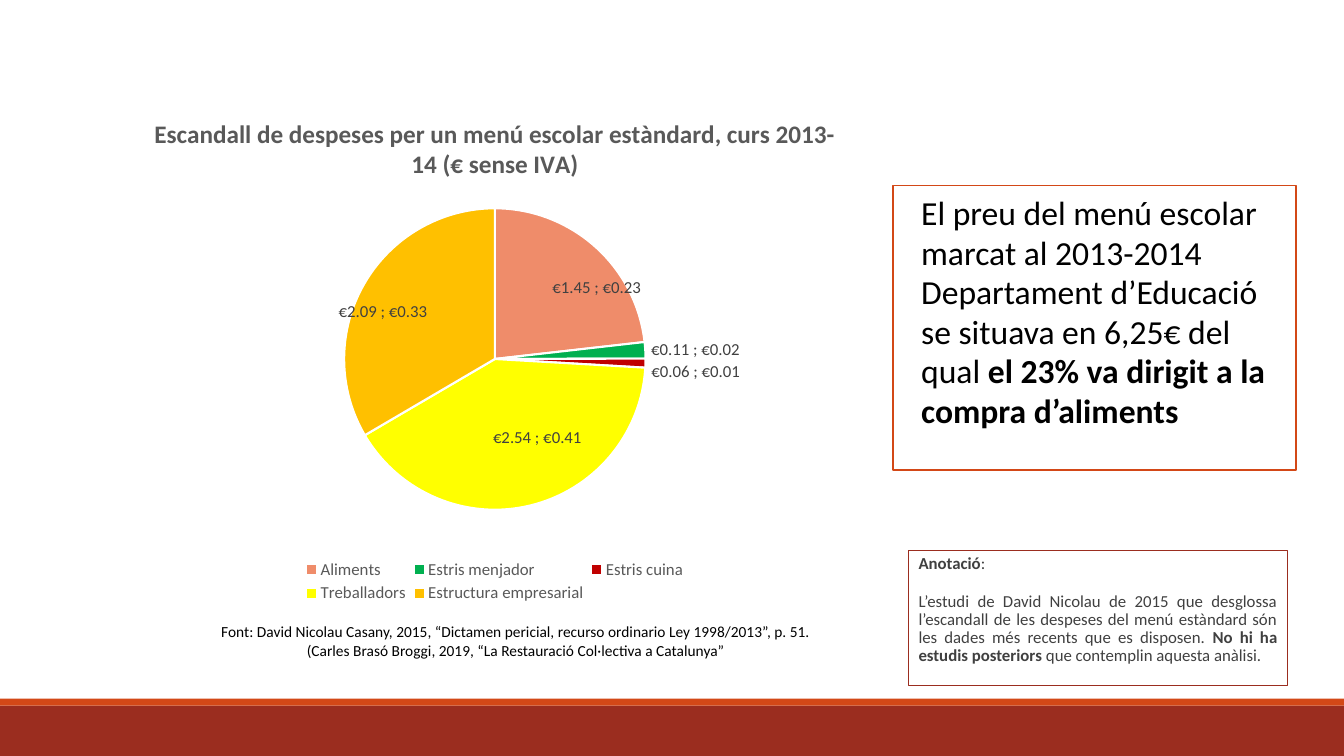
from lxml import etree
from pptx import Presentation
from pptx.chart.data import CategoryChartData
from pptx.dml.color import RGBColor
from pptx.enum.chart import XL_CHART_TYPE, XL_LABEL_POSITION as LABEL, XL_LEGEND_POSITION
from pptx.enum.shapes import MSO_SHAPE
from pptx.enum.text import MSO_ANCHOR, PP_ALIGN
from pptx.oxml.ns import qn
from pptx.util import Pt

BRICK = RGBColor(0x9B, 0x2D, 0x1F)
ORANGE = RGBColor(0xD3, 0x48, 0x17)
SALMON = RGBColor(0xEF, 0x8C, 0x6A)
GREEN = RGBColor(0x00, 0xB0, 0x50)
RED = RGBColor(0xC0, 0x00, 0x00)
YELLOW = RGBColor(0xFF, 0xFF, 0x00)
AMBER = RGBColor(0xFF, 0xC0, 0x00)
WHITE = RGBColor(0xFF, 0xFF, 0xFF)
BLACK = RGBColor(0, 0, 0)
GREY = RGBColor(0x59, 0x59, 0x59)
DARK = RGBColor(0x40, 0x40, 0x40)
EURO = '"€"#,##0.00_)'


def make_layout(**values):
    layout = etree.Element(qn("c:layout"))
    manual = etree.SubElement(layout, qn("c:manualLayout"))
    for name, value in values.items():
        etree.SubElement(manual, qn(f"c:{name}")).set("val", str(value))
    return layout


def style_font(font, size, color, bold=False):
    font.name, font.size, font.bold = "Calibri", Pt(size), bold
    font.color.rgb = color


deck = Presentation()
deck.slide_width, deck.slide_height = Pt(960), Pt(540)
slide = deck.slides.add_slide(deck.slide_layouts[6])

for top, height, color in [(504, 36, BRICK), (499, 5, ORANGE)]:
    band = slide.shapes.add_shape(MSO_SHAPE.RECTANGLE, 0, Pt(top), Pt(960), Pt(height))
    band.shadow.inherit = False
    band.fill.solid()
    band.fill.fore_color.rgb = color
    band.line.fill.background()

costs = CategoryChartData(number_format=EURO)
costs.categories = ["Aliments", "Estris menjador", "Estris cuina", "Treballadors", "Estructura empresarial"]
costs.add_series("Series 1", [1.45, 0.11, 0.06, 2.54, 2.09])
chart = slide.shapes.add_chart(XL_CHART_TYPE.PIE, Pt(34.5), Pt(68.5), Pt(638), Pt(365), costs).chart
style_font(chart.font, 10, BLACK)

chart.has_title = True
title = chart.chart_title.text_frame
title.text = "Escandall de despeses per un menú escolar estàndard, curs 2013-14 (€ sense IVA)"
style_font(title.paragraphs[0].runs[0].font, 18, GREY, True)

chart.has_legend = True
legend = chart.legend
legend.position = XL_LEGEND_POSITION.BOTTOM
legend.include_in_layout = False
style_font(legend.font, 12, GREY)
legend._element.find(qn("c:legendPos")).addnext(
    make_layout(xMode="edge", yMode="edge", x=0.28, y=0.9, w=0.44, h=0.1))

plot = chart.plots[0]
plot.vary_by_categories = True
plot_area = chart._chartSpace.chart.plotArea
for old_layout in plot_area.findall(qn("c:layout")):
    plot_area.remove(old_layout)
plot_area.insert(0, make_layout(layoutTarget="inner", xMode="edge", yMode="edge", x=0.33, y=0.22, w=0.34, h=0.59))

series = plot.series[0]
labels = series.data_labels
labels.show_value = labels.show_percentage = True
labels.number_format, labels.number_format_is_linked = EURO, False
labels.position = LABEL.BEST_FIT
style_font(labels.font, 12, DARK)

for index, color in enumerate([SALMON, GREEN, RED, YELLOW, AMBER]):
    point = series.points[index]
    point.format.fill.solid()
    point.format.fill.fore_color.rgb = color
    point.format.line.color.rgb = WHITE
    point.format.line.width = Pt(1.5)

label_shifts = {0: (0.06, -0.03), 3: (0.03, 0.01), 4: (-0.05, -0.02)}
for index in label_shifts:
    label = series.points[index].data_label
    style_font(label.font, 12, DARK)
    label.position = LABEL.CENTER

for element in series._element.iter(qn("c:dLbl")):
    index = element.find(qn("c:idx"))
    x, y = label_shifts[int(index.get("val"))]
    layout = make_layout(x=x, y=y)
    index.addnext(layout)
    number_format = etree.Element(qn("c:numFmt"), formatCode=EURO, sourceLinked="0")
    layout.addnext(number_format)
    element.find(qn("c:showPercent")).set("val", "1")

for bubble in list(series._element.iter(qn("c:showBubbleSize"))):
    separator = etree.Element(qn("c:separator"))
    separator.text = "; "
    bubble.addnext(separator)

source = slide.shapes.add_textbox(Pt(150), Pt(441), Pt(437), Pt(30)).text_frame
source.word_wrap = True
source.text = ("Font: David Nicolau Casany, 2015, “Dictamen pericial, recurso ordinario Ley 1998/2013”, p. 51. "
               "(Carles Brasó Broggi, 2019, “La Restauració Col·lectiva a Catalunya”")
source.paragraphs[0].alignment = PP_ALIGN.CENTER
style_font(source.paragraphs[0].runs[0].font, 11, BLACK)

note = [
    [("Anotació", True), (":", False)],
    [("L’estudi de David Nicolau de 2015 que desglossa l’escandall de les despeses del menú estàndard "
      "són les dades més recents que es disposen. ", False),
     ("No hi ha estudis posteriors ", True), ("que contemplin aquesta anàlisi.", False)],
]
price = [
    [("El preu del menú escolar marcat al 2013-2014 Departament d’Educació se situava en 6,25€ del qual ", False),
     ("el 23% va dirigit a la compra d’aliments", True)],
]
boxes = [
    ((649, 393, 270.5, 97), BRICK, 0.75, (7.2, 3.6), PP_ALIGN.JUSTIFY, 0.9, 12, DARK, note),
    ((638, 132.5, 288, 203), ORANGE, 1.25, (20, 6), PP_ALIGN.LEFT, 0.98, 24, BLACK, price),
]
for place, edge, width, (side, top), align, spacing, size, color, paragraphs in boxes:
    box = slide.shapes.add_shape(MSO_SHAPE.RECTANGLE, *map(Pt, place))
    box.shadow.inherit = False
    box.fill.solid()
    box.fill.fore_color.rgb = WHITE
    box.line.color.rgb = edge
    box.line.width = Pt(width)
    frame = box.text_frame
    frame.word_wrap = True
    frame.vertical_anchor = MSO_ANCHOR.TOP
    frame.margin_left = frame.margin_right = Pt(side)
    frame.margin_top, frame.margin_bottom = Pt(top), Pt(3.6)
    for number, spans in enumerate(paragraphs):
        para = frame.add_paragraph() if number else frame.paragraphs[0]
        para.alignment = align
        para.line_spacing = spacing
        para.space_before = Pt(12 if number else 0)
        para.space_after = Pt(2)
        for text, bold in spans:
            span = para.add_run()
            span.text = text
            style_font(span.font, size, color, bold)

deck.save("out.pptx")
